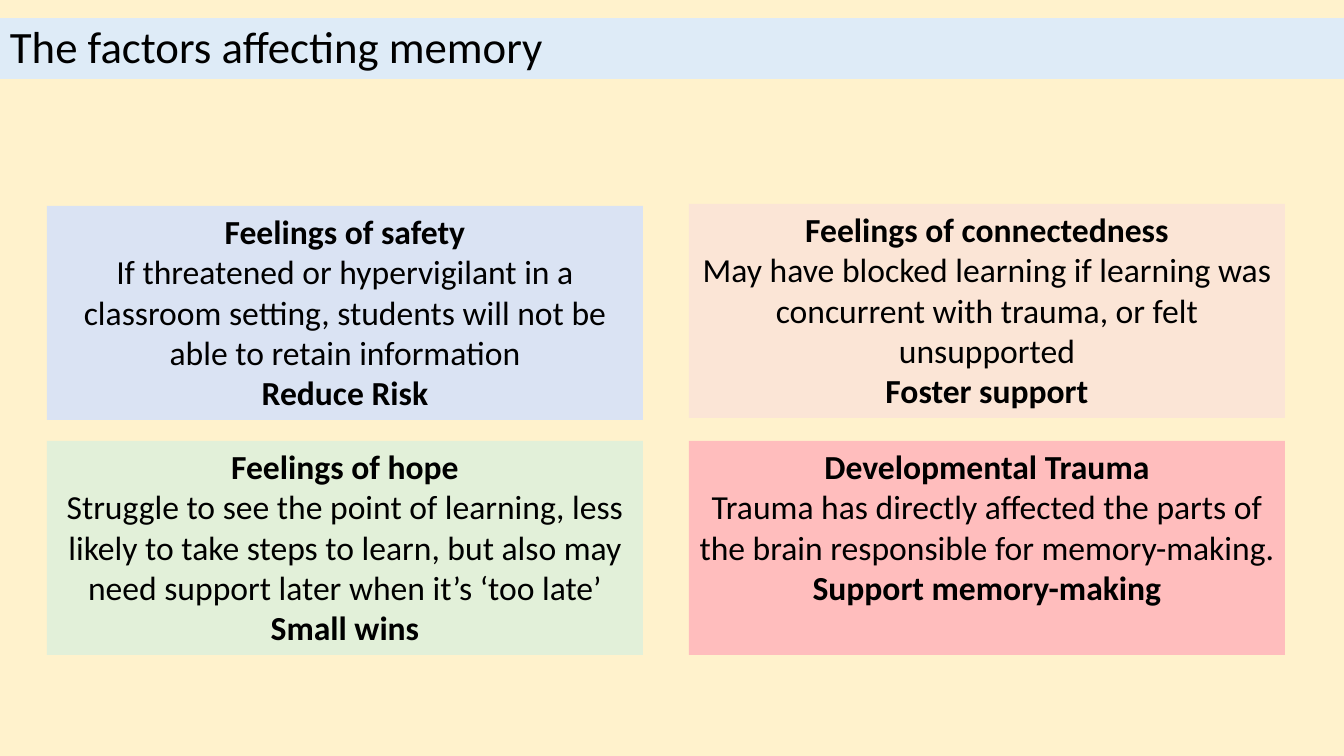
from pptx import Presentation
from pptx.dml.color import RGBColor
from pptx.enum.text import MSO_ANCHOR, PP_ALIGN
from pptx.util import Pt

TITLE = "The factors affecting memory"
BACKGROUND, TITLE_FILL, INK = "FFF2CC", "DEEBF7", "000000"
FONT = "Calibri"

# column, top in px, fill, heading, explanation, response
FACTORS = [
    (0, 441, "E2F0D9", "Feelings of hope",
     "Struggle to see the point of learning, less likely to take steps to learn, "
     "but also may need support later when it’s ‘too late’",
     "Small wins"),
    (0, 206, "DAE3F3", "Feelings of safety",
     "If threatened or hypervigilant in a classroom setting, "
     "students will not be able to retain information",
     "Reduce Risk"),
    (1, 204, "FBE5D6", "Feelings of connectedness",
     "May have blocked learning if learning was concurrent with trauma, "
     "or felt unsupported",
     "Foster support"),
    (1, 441, "FFBDBD", "Developmental Trauma",
     "Trauma has directly affected the parts of the brain responsible "
     "for memory-making.",
     "Support memory-making"),
]

SLIDE_WIDTH, SLIDE_HEIGHT = 1344, 756
CARD_LEFT, CARD_WIDTH, CARD_HEIGHT, COLUMN_STEP = 47, 596, 214, 642


def px(length):
    return round(length * 914400 / 100.8)


def color(value):
    return RGBColor.from_string(value)


def add_panel(page, left, top, width, height, fill, anchor):
    box = page.shapes.add_textbox(px(left), px(top), px(width), px(height))
    box.fill.solid()
    box.fill.fore_color.rgb = color(fill)
    box.text_frame.word_wrap = True
    box.text_frame.vertical_anchor = anchor
    return box.text_frame


def add_span(para, text, size, bold=False):
    span = para.add_run()
    span.text = text
    span.font.name = FONT
    span.font.size = Pt(size)
    span.font.bold = bold
    span.font.color.rgb = color(INK)


def add_card(page, column, top, fill, heading, explanation, response):
    left = CARD_LEFT + column * COLUMN_STEP
    frame = add_panel(page, left, top, CARD_WIDTH, CARD_HEIGHT, fill, MSO_ANCHOR.TOP)
    lines = [(heading, True), (explanation, False), (response, True)]
    for index, (text, bold) in enumerate(lines):
        para = frame.add_paragraph() if index else frame.paragraphs[0]
        para.alignment = PP_ALIGN.CENTER
        add_span(para, text, 24, bold)


def main():
    deck = Presentation()
    deck.slide_width, deck.slide_height = px(SLIDE_WIDTH), px(SLIDE_HEIGHT)
    page = deck.slides.add_slide(deck.slide_layouts[6])
    page.background.fill.solid()
    page.background.fill.fore_color.rgb = color(BACKGROUND)

    title = add_panel(page, 0, 18, SLIDE_WIDTH, 61, TITLE_FILL, MSO_ANCHOR.MIDDLE)
    title.paragraphs[0].line_spacing = 0.9
    add_span(title.paragraphs[0], TITLE, 32)

    for factor in FACTORS:
        add_card(page, *factor)
    deck.save("out.pptx")


if __name__ == "__main__":
    main()
